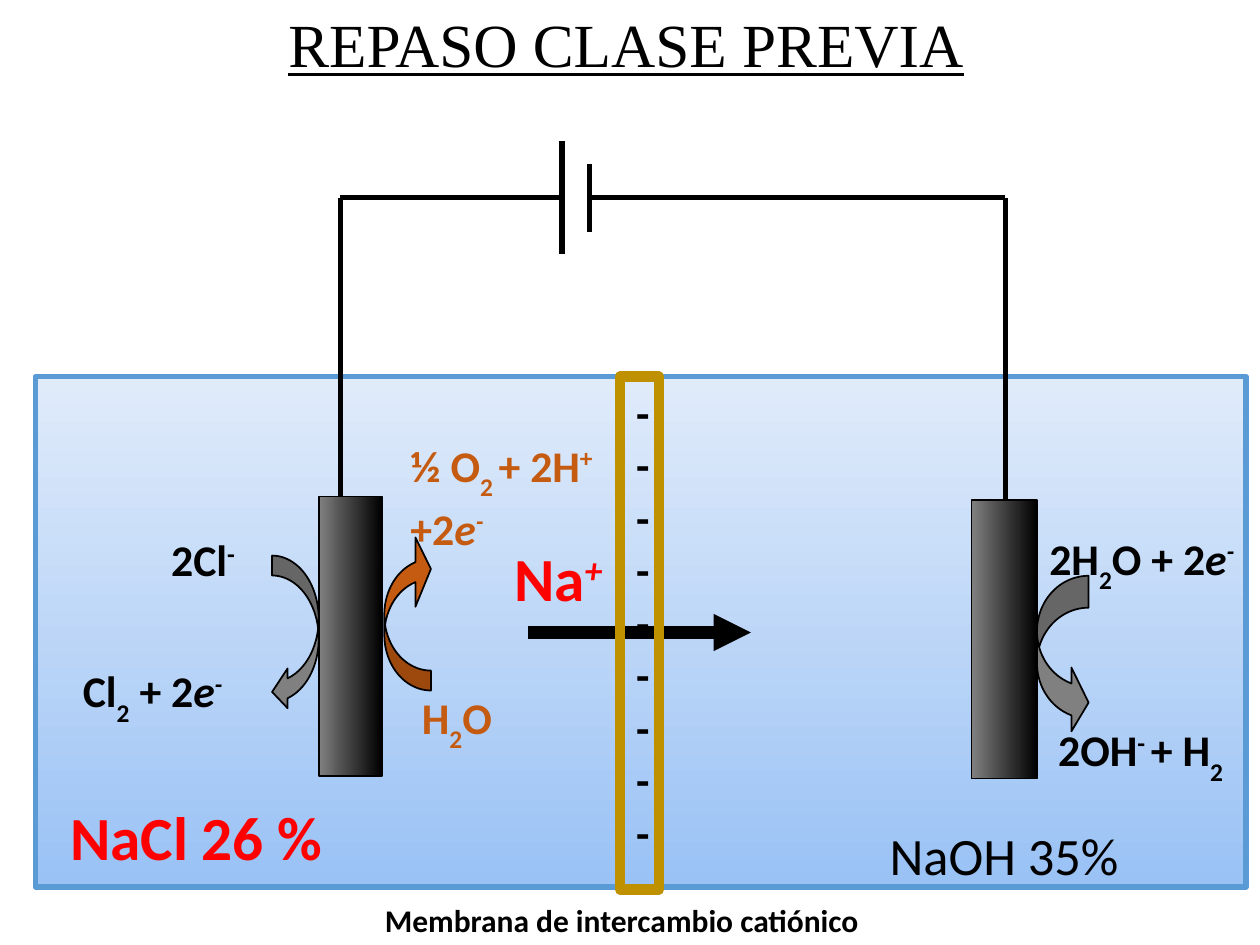
import collections

import pptx
import pptx.dml.color
import pptx.enum.shapes
import pptx.enum.text
import pptx.oxml
import pptx.oxml.ns
import pptx.util

PX = 9144  # 100 px to the inch
SHAPES = pptx.enum.shapes.MSO_SHAPE
BLACK, RED, ORANGE, GREY = "000000", "FF0000", "C55A11", "808080"
Box = collections.namedtuple("Box", "left top width height")
Span = collections.namedtuple("Span", "text base italic", defaults=(0, False))

SUB_2 = Span("2", -33)
ELECTRON = [Span("e", 0, True), Span("-", 33, True)]
BREAK = Span("\n")


def emu(*lengths):
    return [length * PX for length in lengths]


def within(box, left, top, width, height):
    """Turn a place relative to box into a place on the slide."""
    return Box(box.left + left, box.top + top, width, height)


def colour(value):
    return pptx.dml.color.RGBColor.from_string(value)


def add_text(slide, box, *spans, size=25, color=BLACK, bold=True, font="Calibri",
             underline=None, wrap=True):
    """Add a text box; one that does not wrap is centred on its box."""
    frame = slide.shapes.add_textbox(*emu(*box)).text_frame
    frame.word_wrap = wrap
    frame.auto_size = pptx.enum.text.MSO_AUTO_SIZE.SHAPE_TO_FIT_TEXT
    para = frame.paragraphs[0]
    if not wrap:
        para.alignment = pptx.enum.text.PP_ALIGN.CENTER
    for span in spans:
        if span == BREAK:
            para.add_line_break()
            continue
        run = para.add_run()
        run.text = span.text
        run.font.name = font
        run.font.size = pptx.util.Pt(size)
        run.font.bold = bold
        run.font.italic = span.italic
        run.font.underline = underline
        run.font.color.rgb = colour(color)
        if span.base:
            run._r.get_or_add_rPr().set("baseline", str(span.base * 1000))


def add_shape(slide, kind, box, fill=None, gradient=None, angle=0, line=BLACK,
              weight=1, adjust=(), rotation=0):
    shape = slide.shapes.add_shape(kind, *emu(*box))
    shape.shadow.inherit = False
    shape.rotation = rotation
    shape.line.color.rgb = colour(line)
    shape.line.width = pptx.util.Pt(weight)
    for index, value in enumerate(adjust):
        shape.adjustments[index] = value
    if gradient:
        shape.fill.gradient()
        shape.fill.gradient_angle = angle
        for stop, value in zip(shape.fill.gradient_stops, gradient):
            stop.color.rgb = colour(value)
    elif fill:
        shape.fill.solid()
        shape.fill.fore_color.rgb = colour(fill)
    else:
        shape.fill.background()


def add_line(slide, start, end, weight=3, arrow=False):
    line = slide.shapes.add_connector(
        pptx.enum.shapes.MSO_CONNECTOR.STRAIGHT, *emu(*start, *end))
    line.line.color.rgb = colour(BLACK)
    line.line.width = pptx.util.Pt(weight)
    if arrow:
        head = pptx.oxml.parse_xml(
            f'<a:tailEnd {pptx.oxml.ns.nsdecls("a")} type="triangle"/>')
        line.line._get_or_add_ln().append(head)
    line._element.spPr.append(
        pptx.oxml.parse_xml(f'<a:effectLst {pptx.oxml.ns.nsdecls("a")}/>'))


def add_electrode(slide, box):
    add_shape(slide, SHAPES.RECTANGLE, box, gradient=(GREY, BLACK))


def add_circuit(slide, box):
    """Two wires down to the electrodes, joined through a battery."""
    left, top, width, height = box
    right, bottom, middle = left + width, top + height, top + 45
    for plate, end, half in ((left + 176, left, 45), (left + 198, right, 27)):
        add_line(slide, (plate, middle - half), (plate, middle + half))
        add_line(slide, (plate, middle), (end, middle))
        add_line(slide, (end, middle), (end, bottom))


def add_anode(slide, box):
    add_electrode(slide, within(box, 197, 51, 50, 222))
    add_shape(slide, SHAPES.CURVED_LEFT_ARROW, within(box, 160, 98, 37, 124),
              fill=GREY, adjust=(0.427, 0.854, 0.333))
    add_text(slide, within(box, 70, 75, 112, 52), Span("2Cl"), Span("-", 30))
    add_text(slide, within(box, 0, 179, 224, 52),
             Span("Cl"), SUB_2, Span(" + 2"), *ELECTRON)
    add_shape(slide, SHAPES.CURVED_LEFT_ARROW, within(box, 249, 81, 37, 124),
              fill=ORANGE, adjust=(0.427, 1.488, 0.333), rotation=180)
    add_text(slide, within(box, 269, 200, 112, 52),
             Span("H"), SUB_2, Span("O"), color=ORANGE)
    add_text(slide, within(box, 260, 0, 224, 94), Span("½ O"), Span("2 ", -33),
             Span("+ 2H"), Span("+", 33), BREAK, Span("+2"), *ELECTRON, color=ORANGE)


def add_cathode(slide, box):
    add_electrode(slide, within(box, 0, 0, 52, 221))
    add_shape(slide, SHAPES.CURVED_RIGHT_ARROW, within(box, 52, 60, 41, 126),
              fill=GREY, adjust=(0.618, 1.236, 0.333))
    add_text(slide, within(box, 52, 20, 196, 49),
             Span("2H"), SUB_2, Span("O + 2"), *ELECTRON)
    add_text(slide, within(box, 59, 172, 167, 49),
             Span("2OH"), Span("- ", 33), Span("+ H"), SUB_2)


def add_membrane(slide, box):
    """The membrane with its fixed charges, and the sodium ion that crosses it."""
    level = box.top + 203
    add_line(slide, (box.left - 73, level), (box.left + 104, level),
             weight=7.09, arrow=True)
    add_text(slide, within(box, 3, 2, 25, 401), Span("-" * 10))
    add_shape(slide, SHAPES.RECTANGLE, box, line="BF9000", weight=6)
    add_text(slide, within(box, -100, 125, 102, 65), Span("Na"), Span("+", 30, True),
             size=35, color=RED, wrap=False)
    add_text(slide, within(box, -198, 411, 399, 40),
             Span("Membrana de intercambio catiónico"), size=18, wrap=False)


def add_bath(slide, box):
    add_shape(slide, SHAPES.RECTANGLE, box, gradient=("E0EBFA", "9AC2F5"),
              angle=270, line="5B9BD5", weight=3)
    add_text(slide, within(box, 667, 349, 204, 61), Span("NaOH 35%"),
             size=30, bold=False, wrap=False)
    add_text(slide, within(box, 13, 330, 230, 69), Span("NaCl 26 % "),
             size=35, color=RED, wrap=False)


def main():
    deck = pptx.Presentation()
    deck.slide_width, deck.slide_height = emu(1000, 750)
    slide = deck.slides.add_slide(deck.slide_layouts[6])
    add_bath(slide, Box(28, 299, 961, 405))
    add_circuit(slide, Box(270, 112, 528, 285))
    add_cathode(slide, Box(771, 397, 248, 221))
    add_anode(slide, Box(56, 343, 484, 273))
    add_membrane(slide, Box(492, 299, 31, 407))
    add_text(slide, Box(219, 0, 561, 69), Span("REPASO CLASE PREVIA"),
             size=35, bold=False, font="Times New Roman", underline=True)
    deck.save("out.pptx")


if __name__ == "__main__":
    main()
